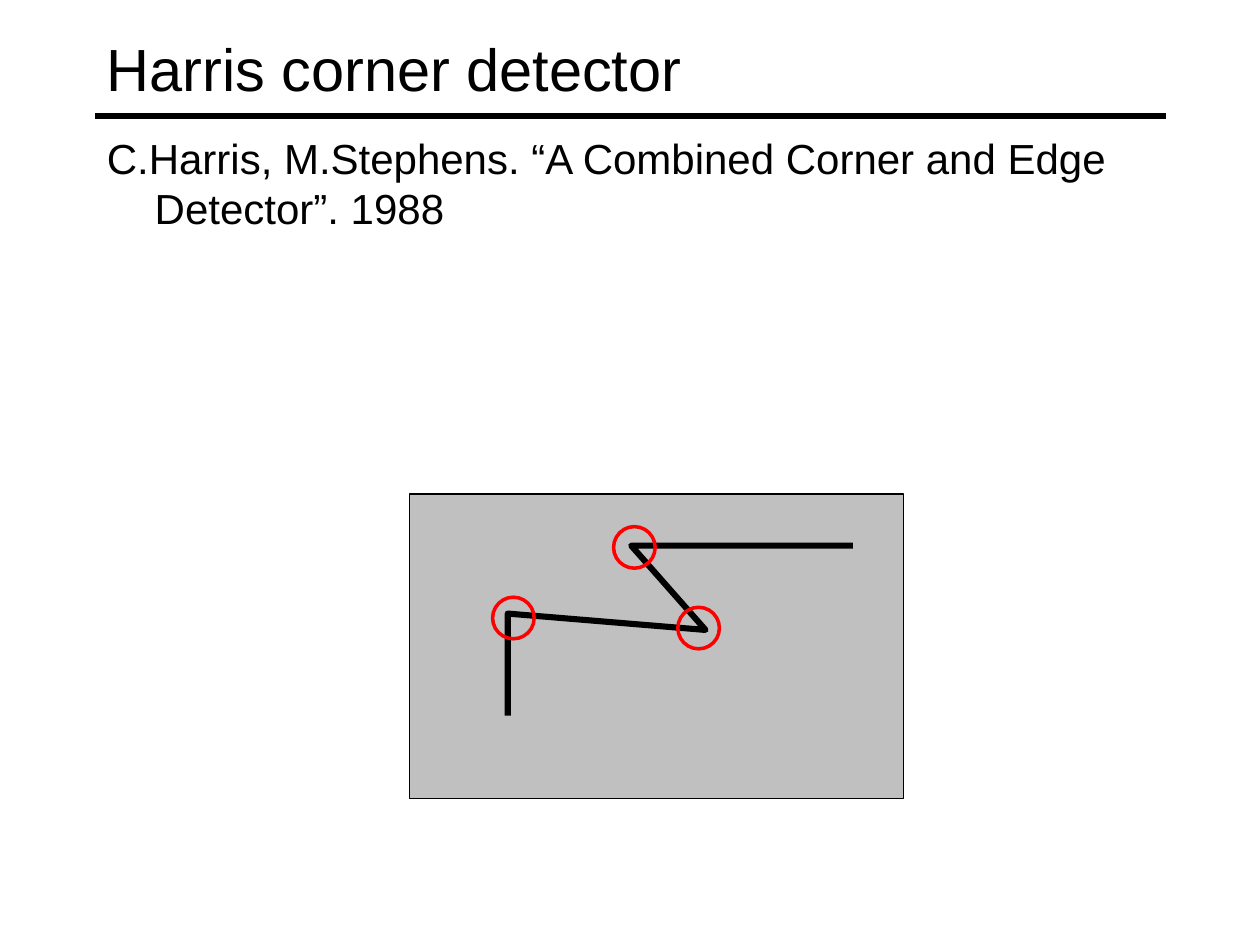
from typing import NamedTuple

from pptx import Presentation
from pptx.dml.color import RGBColor
from pptx.enum.shapes import MSO_CONNECTOR as Connector, MSO_SHAPE as Preset
from pptx.enum.text import MSO_ANCHOR as Anchor
from pptx.oxml.ns import qn
from pptx.util import Inches, Pt

COLORS = {"ink": "000000", "panel": "C0C0C0", "marker": "FF0000", "paper": "FFFFFF"}
MARGIN, CONTENT_WIDTH = 0.75, 8.5
MARKER_SIZE = 0.33


class Box(NamedTuple):
    left: float
    top: float
    width: float
    height: float


class Point(NamedTuple):
    x: float
    y: float


EDGE = [Point(4.03, 5.68), Point(4.03, 4.87), Point(5.6, 5), Point(5.01, 4.33), Point(6.77, 4.33)]
CORNER_MARKERS = [Point(3.91, 4.74), Point(5.38, 4.82), Point(4.87, 4.18)]


def color(name: str) -> RGBColor:
    return RGBColor.from_string(COLORS[name])


def set_line(line, name: str, width: float) -> None:
    line.color.rgb = color(name)
    line.width = Pt(width)


def add_text(shapes, box: Box, words: str, size: float, frame_format: dict):
    frame = shapes.add_textbox(*map(Inches, box)).text_frame
    for attribute, value in {"word_wrap": True, **frame_format}.items():
        setattr(frame, attribute, value)
    paragraph = frame.paragraphs[0]
    run = paragraph.add_run()
    run.text = words
    for attribute, value in {"name": "Arial", "size": Pt(size)}.items():
        setattr(run.font, attribute, value)
    run.font.color.rgb = color("ink")
    return paragraph


def add_preset(shapes, preset: Preset, box: Box, line: tuple[str, float], fill: str | None = None) -> None:
    shape = shapes.add_shape(preset, *map(Inches, box))
    shape.shadow.inherit = False
    if fill:
        shape.fill.solid()
        shape.fill.fore_color.rgb = color(fill)
    else:
        shape.fill.background()
    set_line(shape.line, *line)


def add_edge(shapes, points: list[Point]) -> None:
    builder = shapes.build_freeform(*map(Inches, points[0]), scale=1.0)
    builder.add_line_segments([tuple(map(Inches, point)) for point in points[1:]], close=False)
    edge = builder.convert_to_shape()
    edge.shadow.inherit = False
    edge.fill.background()
    set_line(edge.line, "ink", 3.5)


def add_rule(shapes, y: float) -> None:
    ends = (MARGIN, y, MARGIN + CONTENT_WIDTH, y)
    rule = shapes.add_connector(Connector.STRAIGHT, *map(Inches, ends))
    set_line(rule.line, "ink", 3)
    properties = rule._element.spPr
    properties.append(properties.makeelement(qn("a:effectLst"), {}))


def main() -> None:
    presentation = Presentation()
    presentation.slide_width, presentation.slide_height = Inches(10), Inches(7.5)
    slide = presentation.slides.add_slide(presentation.slide_layouts[6])
    slide.background.fill.solid()
    slide.background.fill.fore_color.rgb = color("paper")

    add_rule(slide.shapes, 0.92)
    add_text(slide.shapes, Box(MARGIN, 0.08, CONTENT_WIDTH, 0.92), "Harris corner detector", 34,
             {"vertical_anchor": Anchor.MIDDLE})
    citation = add_text(slide.shapes, Box(MARGIN, 1, CONTENT_WIDTH, 5.75),
                        "C.Harris, M.Stephens. “A Combined Corner and Edge Detector”. 1988", 24,
                        {"vertical_anchor": Anchor.TOP})
    citation.space_before = Pt(4.8)
    hanging_indent = Inches(0.38)
    for attribute, value in {"marL": hanging_indent, "indent": -hanging_indent}.items():
        citation._p.get_or_add_pPr().set(attribute, str(value))

    diagram = slide.shapes.add_group_shape().shapes
    add_preset(diagram, Preset.RECTANGLE, Box(3.25, 3.92, 3.92, 2.42), ("ink", 0.75), "panel")
    add_edge(diagram, EDGE)
    for corner in CORNER_MARKERS:
        add_preset(diagram, Preset.OVAL, Box(*corner, MARKER_SIZE, MARKER_SIZE), ("marker", 2))

    presentation.save("out.pptx")


if __name__ == "__main__":
    main()
